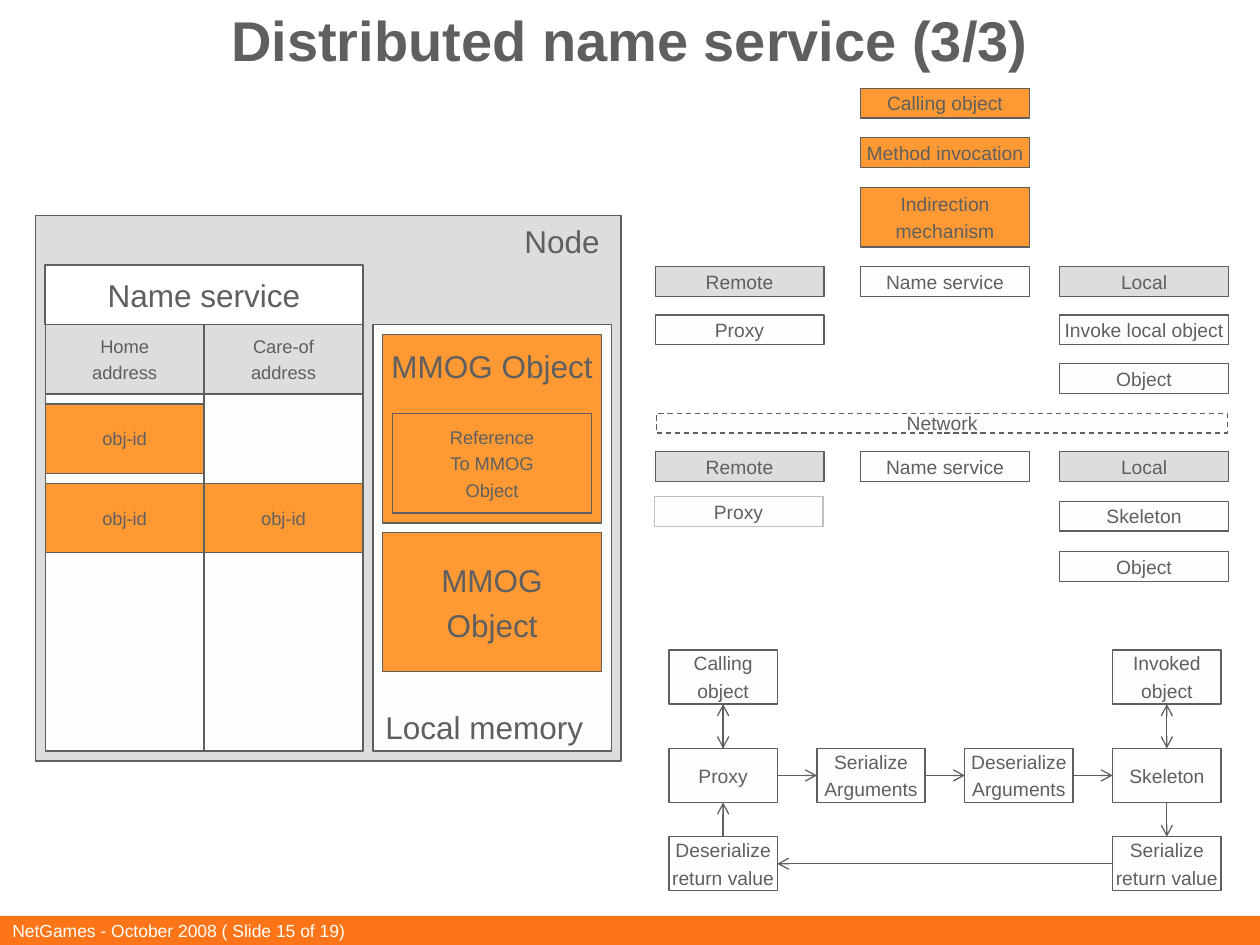
from dataclasses import dataclass

from lxml.etree import SubElement
from pptx import Presentation
from pptx.dml.color import RGBColor
from pptx.enum.dml import MSO_LINE
from pptx.enum.shapes import MSO_CONNECTOR, MSO_SHAPE
from pptx.enum.text import MSO_ANCHOR, PP_ALIGN
from pptx.oxml.ns import qn
from pptx.util import Inches, Pt

WIDE, HIGH = 10, 7.5
TOP, LEFT, BOTTOM, RIGHT = range(4)  # connection sites of a rectangle


@dataclass(frozen=True)
class Theme:
    font: str = "Arial"
    ink: str = "5F5F5F"
    pale: str = "FCFFFB"
    white: str = "FFFFFF"
    gray: str = "DDDDDD"
    faint: str = "BFBFBF"
    orange: str = "FF9933"
    bar: str = "FE7519"
    title: float = 32
    head: float = 18
    body: float = 11
    small: float = 10.5
    foot: float = 10
    rule: float = 0.75
    gap: float = 0.24  # paragraph gap as a share of the type size


T = Theme()


@dataclass
class Grid:
    """A box in inches, divided into columns and rows."""
    x: float
    y: float
    w: float
    h: float
    cols: float
    rows: float

    def cell(self, col, row, wide, high):
        dx, dy = self.w / self.cols, self.h / self.rows
        return [Inches(v) for v in (self.x + col * dx, self.y + row * dy,
                                    wide * dx, high * dy)]


def tint(code):
    return RGBColor.from_string(code)


def write(frame, text, size=T.body, color=T.ink, bold=False, align=PP_ALIGN.CENTER,
          anchor=MSO_ANCHOR.MIDDLE, wrap=False, inset=(0, 0), spacing=None):
    frame.word_wrap = wrap
    frame.vertical_anchor = anchor
    frame.margin_left = frame.margin_right = Inches(inset[0])
    frame.margin_top = frame.margin_bottom = Inches(inset[1])
    for i, line in enumerate(text.split("\n")):
        para = frame.add_paragraph() if i else frame.paragraphs[0]
        para.alignment = align
        para.space_before = Pt(round(size * T.gap, 1) if i else 0)
        if spacing:
            para.line_spacing = spacing
        run = para.add_run()
        run.text = line
        font = run.font
        font.name, font.size, font.bold = T.font, Pt(size), bold
        font.color.rgb = tint(color)


def block(slide, place, text="", fill=T.pale, line=T.ink, dash=None, **style):
    shape = slide.shapes.add_shape(MSO_SHAPE.RECTANGLE, *place)
    shape.shadow.inherit = False
    shape.fill.solid()
    shape.fill.fore_color.rgb = tint(fill)
    if line:
        shape.line.color.rgb = tint(line)
        shape.line.width = Pt(T.rule)
        if dash:
            shape.line.dash_style = dash
    else:
        shape.line.fill.background()
    if text:
        write(shape.text_frame, text, **style)
    return shape


def label(slide, place, text, **style):
    style = {"align": PP_ALIGN.LEFT, "inset": (0.1, 0.05), "wrap": True, **style}
    write(slide.shapes.add_textbox(*place).text_frame, text, **style)


def arrow(slide, start, out, end, into):
    """Join site `out` of one shape to site `into` of another."""
    link = slide.shapes.add_connector(MSO_CONNECTOR.STRAIGHT, 0, 0, 0, 0)
    link.begin_connect(start, out)
    link.end_connect(end, into)
    link.line.color.rgb = tint(T.ink)
    link.line.width = Pt(T.rule)
    SubElement(link.line._get_or_add_ln(), qn("a:tailEnd"), type="arrow")
    SubElement(link._element.spPr, qn("a:effectLst"))


def header(slide, grid):
    title = slide.shapes.title
    title.left, title.top, title.width, title.height = grid.cell(0, 0, 1, 1)
    write(title.text_frame, "Distributed name service (3/3)", size=T.title,
          bold=True, wrap=True, spacing=0.85)


def footer(slide, grid):
    block(slide, grid.cell(0, 0, 1, 1), fill=T.bar, line=None)
    label(slide, grid.cell(0, 0, 0.31, 1), "NetGames - October 2008 ( Slide 15 of 19)",
          size=T.foot, color=T.pale, anchor=MSO_ANCHOR.MIDDLE, inset=(0.1, 0))


def node(slide, grid):
    """Node with its name table on the left and its memory on the right."""
    at = grid.cell
    half, first, second = 16, 1, 17
    block(slide, at(0, 0, grid.cols, grid.rows), fill=T.gray)
    block(slide, at(34, 11, 24, 43))
    for col in (first, second):
        block(slide, at(col, 18, half, 36))
    block(slide, at(first, 5, 2 * half, 6), "Name service", fill=T.white, size=T.head)
    for col, row, text, fill in (
        (first, 11, "Home\naddress", T.gray),
        (second, 11, "Care-of\naddress", T.gray),
        (first, 19, "obj-id", T.orange),
        (first, 27, "obj-id", T.orange),
        (second, 27, "obj-id", T.orange),
    ):
        block(slide, at(col, row, half, 7), text, fill=fill, size=T.small)

    block(slide, at(35, 12, 22, 19), "MMOG Object", fill=T.orange, size=T.head,
          anchor=MSO_ANCHOR.TOP, inset=(0, 0.1))
    block(slide, at(36, 20, 20, 10), "Reference\nTo MMOG\nObject", fill=T.orange,
          size=T.small)
    block(slide, at(35, 32, 22, 14), "MMOG\nObject", fill=T.orange, size=T.head)
    label(slide, at(48, 0, 11, 5), "Node", size=T.head, anchor=MSO_ANCHOR.TOP)
    label(slide, at(34, 49, 23, 5), "Local memory", size=T.head, anchor=MSO_ANCHOR.TOP)


def calls(slide, grid):
    """Steps of a call on both sides of the network."""
    left, mid, right = 0, 41.4, 81.5
    wide, high = 34, 6
    for col, row, text, fill in (
        (mid, 0, "Calling object", T.orange),
        (mid, 10, "Method invocation", T.orange),
        (mid, 20, "Indirection\nmechanism", T.orange),
        (mid, 36, "Name service", T.pale),
        (right, 36, "Local", T.gray),
        (left, 36, "Remote", T.gray),
        (left, 45.7, "Proxy", T.pale),
        (right, 45.7, "Invoke local object", T.pale),
        (right, 55.5, "Object", T.pale),
        (mid, 73.2, "Name service", T.pale),
        (right, 73.2, "Local", T.gray),
        (left, 73.2, "Remote", T.gray),
        (right, 83.2, "Skeleton", T.pale),
        (right, 93.4, "Object", T.pale),
    ):
        tall = high * len(text.split("\n"))
        block(slide, grid.cell(col, row, wide, tall), text, fill=fill)
    block(slide, grid.cell(0.3, 65.5, 115, 4), "Network", dash=MSO_LINE.DASH)
    block(slide, grid.cell(-0.2, 82.3, wide, high), "Proxy", line=T.faint)


def flow(slide, grid):
    """Round trip of a remote call, from proxy to skeleton and back."""
    step, wide, high = 29.8, 21.8, 10.9
    upper, main, lower = 0, 19.8, 37.6

    def put(col, row, text):
        return block(slide, grid.cell(col * step, row, wide, high), text)

    proxy = put(0, main, "Proxy")
    skel = put(3, main, "Skeleton")
    pack = put(1, main, "Serialize\nArguments")
    unpack = put(2, main, "Deserialize\nArguments")
    result = put(0, lower, "Deserialize\nreturn value")
    reply = put(3, lower, "Serialize\nreturn value")
    caller = put(0, upper, "Calling\nobject")
    target = put(3, upper, "Invoked\nobject")

    for start, end in ((proxy, pack), (pack, unpack), (unpack, skel)):
        arrow(slide, start, RIGHT, end, LEFT)
    arrow(slide, skel, BOTTOM, reply, TOP)
    arrow(slide, reply, LEFT, result, RIGHT)
    arrow(slide, result, TOP, proxy, BOTTOM)
    for above, below in ((caller, proxy), (target, skel)):
        arrow(slide, above, BOTTOM, below, TOP)
        arrow(slide, below, TOP, above, BOTTOM)


def main():
    deck = Presentation()
    deck.slide_width, deck.slide_height = Inches(WIDE), Inches(HIGH)
    slide = deck.slides.add_slide(deck.slide_layouts[5])
    footer(slide, Grid(0, 7.27, WIDE, 0.23, 1, 1))
    header(slide, Grid(0, 0, WIDE, 0.7, 1, 1))
    calls(slide, Grid(5.2, 0.7, 4.55, 3.92, 115.5, 99.5))
    node(slide, Grid(0.28, 1.71, 4.65, 4.33, 59, 55))
    flow(slide, Grid(5.31, 5.16, 4.38, 1.91, 111.2, 48.5))
    deck.save("out.pptx")


if __name__ == "__main__":
    main()
